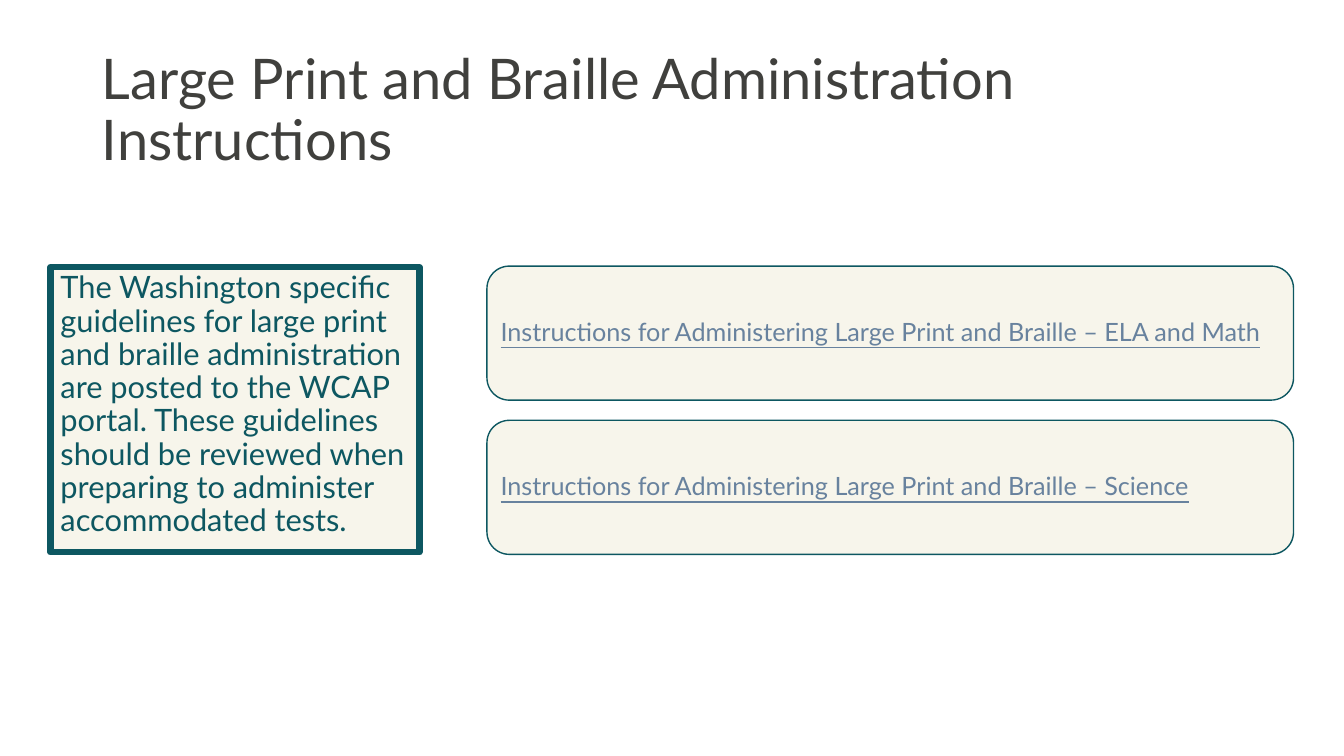
import pptx
import pptx.dml.color
import pptx.enum.shapes
import pptx.enum.text
import pptx.oxml
import pptx.oxml.ns
import pptx.util

Inches = pptx.util.Inches
Pt = pptx.util.Pt
ANCHOR = pptx.enum.text.MSO_ANCHOR
COLORS = {"title": "40403D", "teal": "0D5761", "cream": "F7F5EB", "link": "68829E"}


def rgb(name):
    return pptx.dml.color.RGBColor.from_string(COLORS[name])


def write(sp, text, size, color, anchor, underline=None):
    tf = sp.text_frame
    tf.text = text
    tf.word_wrap = True
    tf.auto_size = pptx.enum.text.MSO_AUTO_SIZE.NONE
    tf.vertical_anchor = anchor
    p = tf.paragraphs[0]
    p.alignment = pptx.enum.text.PP_ALIGN.LEFT
    p.line_spacing = 0.9
    p.space_before = Pt(0)
    font = p.runs[0].font
    font.name = "Lato"
    font.size = Pt(size)
    font.color.rgb = rgb(color)
    font.underline = underline


prs = pptx.Presentation()
prs.slide_width = Inches(13.33)
prs.slide_height = Inches(7.5)
s = prs.slides.add_slide(prs.slide_layouts[1])

# Title
title = s.shapes.title
title.left, title.top = Inches(0.91), Inches(0.43)
title.width, title.height = Inches(10.38), Inches(1.33)
write(title, "Large Print and Braille Administration Instructions", 40, "title", ANCHOR.BOTTOM)

# Framed guidelines text, without a bullet
body = s.placeholders[1]
body.left, body.top = Inches(0.5), Inches(2.65)
body.width, body.height = Inches(3.66), Inches(2.83)
body.fill.solid()
body.fill.fore_color.rgb = rgb("cream")
body.line.color.rgb = rgb("teal")
body.line.width = Pt(4.5)
write(body, "The Washington specific guidelines for large print and braille "
      "administration are posted to the WCAP portal. These guidelines should be "
      "reviewed when preparing to administer accommodated tests.", 22, "teal", ANCHOR.TOP)
pPr = body.text_frame.paragraphs[0]._p.get_or_add_pPr()
pPr.set("marL", "0")
pPr.set("indent", "0")
pPr.append(pptx.oxml.parse_xml("<a:buNone %s/>" % pptx.oxml.ns.nsdecls("a")))

# Instruction cards
for i, subject in enumerate(["ELA and Math", "Science"]):
    sp = s.shapes.add_shape(pptx.enum.shapes.MSO_SHAPE.ROUNDED_RECTANGLE,
                            Inches(4.83), Inches(2.64 + 1.53 * i), Inches(8), Inches(1.33))
    sp.shadow.inherit = False
    sp.fill.solid()
    sp.fill.fore_color.rgb = rgb("cream")
    sp.line.color.rgb = rgb("teal")
    sp.line.width = Pt(1)
    write(sp, f"Instructions for Administering Large Print and Braille – {subject}",
          18, "link", ANCHOR.MIDDLE, underline=True)
    # The rounded corners already inset the text by 0.06 inch
    sp.text_frame.margin_left = sp.text_frame.margin_right = Inches(0.07)

prs.save("out.pptx")
